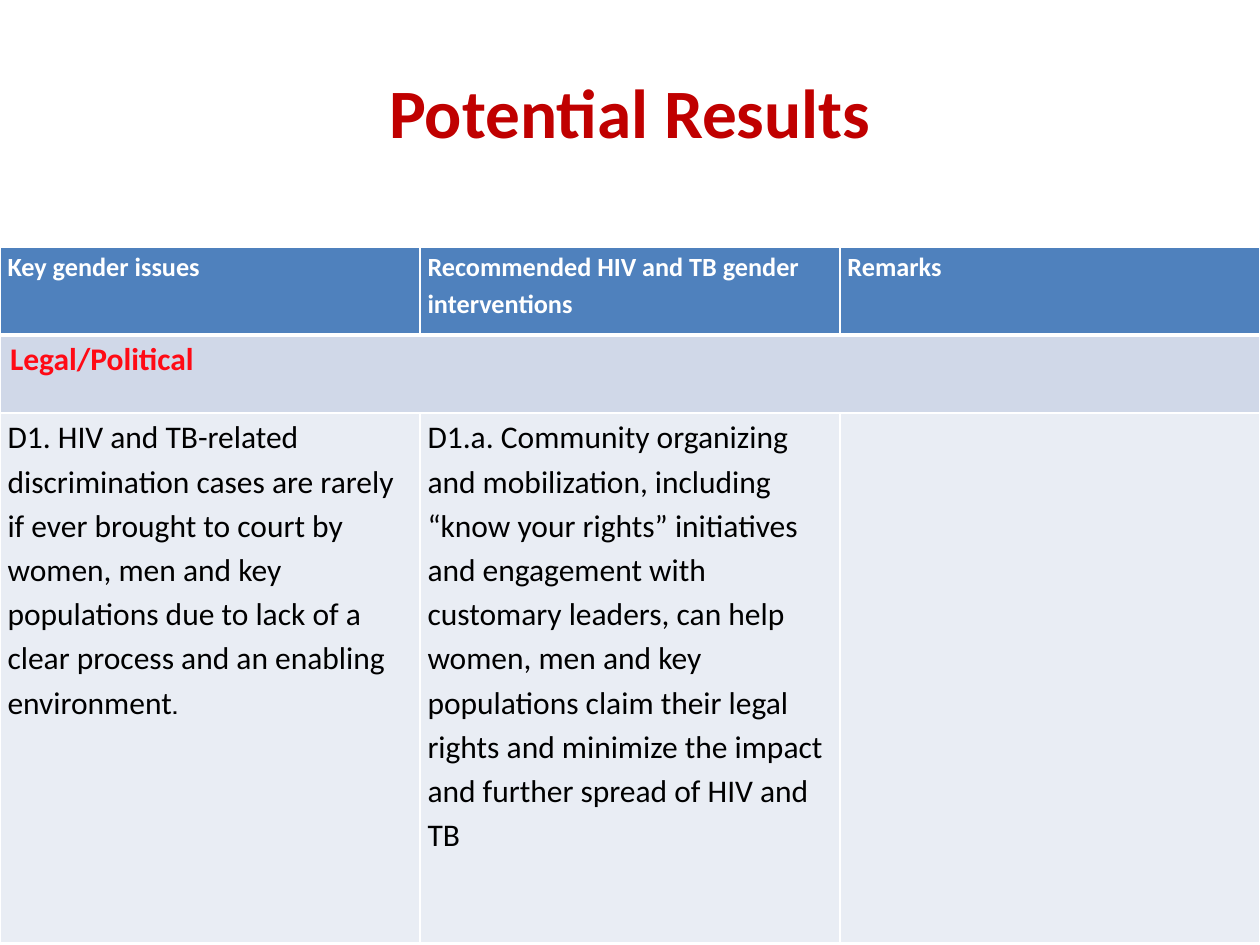
from lxml import etree
from pptx import Presentation
from pptx.dml.color import RGBColor
from pptx.enum.text import MSO_ANCHOR, PP_ALIGN
from pptx.oxml.ns import qn
from pptx.util import Inches, Pt

TOP, CENTER = MSO_ANCHOR.TOP, PP_ALIGN.CENTER
WHITE = RGBColor(0xFF, 0xFF, 0xFF)
BLACK = RGBColor(0, 0, 0)
MAROON = RGBColor(0xC0, 0, 0)
RED = RGBColor(0xFF, 0x0A, 0x15)
BLUE = RGBColor(0x4F, 0x81, 0xBD)
MID = RGBColor(0xD0, 0xD8, 0xE8)
PALE = RGBColor(0xE9, 0xED, 0xF4)


def add_run(para, text, size, color, bold=False, face="Calibri"):
    run = para.add_run()
    run.text = text
    font = run.font
    font.name, font.size, font.bold = face, Pt(size), bold
    font.color.rgb = color


def add_edge(cell, side, width):
    line = etree.SubElement(cell._tc.get_or_add_tcPr(), qn("a:ln" + side), w=str(Pt(width)))
    fill = etree.SubElement(line, qn("a:solidFill"))
    etree.SubElement(fill, qn("a:srgbClr"), val=str(WHITE))


deck = Presentation()
deck.slide_width, deck.slide_height = Inches(10), Inches(7.5)
wide = deck.slide_width
slide = deck.slides.add_slide(deck.slide_layouts[6])

# Title
box = slide.shapes.add_textbox(wide * 5 // 100, Inches(0.55), wide * 9 // 10, Inches(1.25))
frame = box.text_frame
frame.word_wrap = True
frame.vertical_anchor = TOP
frame.margin_top = frame.margin_bottom = 0
para = frame.paragraphs[0]
para.alignment = CENTER
add_run(para, "Potential Results", 39.6, MAROON, True)

# Table content: height, fill and cells of each row; a cell is a list of runs
head = (15, WHITE, True)
body = (18, BLACK)
rows = [
    (0.7, BLUE, [
        [("Key gender issues", *head)],
        [("Recommended HIV and TB gender interventions", *head)],
        [("Remarks", *head)],
    ]),
    (0.62, MID, [[("Legal/Political", 18, RED, True)], [], []]),
    (4.2, PALE, [
        [("D1. HIV and TB-related discrimination cases are rarely if ever "
          "brought to court by women, men and key populations due to lack of "
          "a clear process and an enabling environment", *body),
         (".", *body, False, "Cabin")],
        [("D1.a. Community organizing and mobilization, including “know your "
          "rights” initiatives and engagement with customary leaders, can help "
          "women, men and key populations claim their legal rights and "
          "minimize the impact and further spread of HIV and TB", *body)],
        [],
    ]),
]

# Table grid
tall = sum(row[0] for row in rows)
table = slide.shapes.add_table(3, 3, 0, Inches(1.96), wide, Inches(tall)).table
for col in table.columns:
    col.width = wide // 3

# Cells
for r, (high, shade, cells) in enumerate(rows):
    table.rows[r].height = Inches(high)
    for c, runs in enumerate(cells):
        cell = table.cell(r, c)
        cell.margin_left = cell.margin_right = Inches(0.06)
        cell.margin_top = cell.margin_bottom = 0
        for side in "LRTB":
            thick = (r, side) in ((0, "B"), (1, "T"))
            add_edge(cell, side, 3 if thick else 1)
        cell.fill.solid()
        cell.fill.fore_color.rgb = shade
        para = cell.text_frame.paragraphs[0]
        para.line_spacing = 1.15
        for run in runs:
            add_run(para, *run)

# Section row spans all columns, with a slight indent
label = table.cell(1, 0)
label.merge(table.cell(1, 2))
label.margin_left = Inches(0.08)

deck.save("out.pptx")
